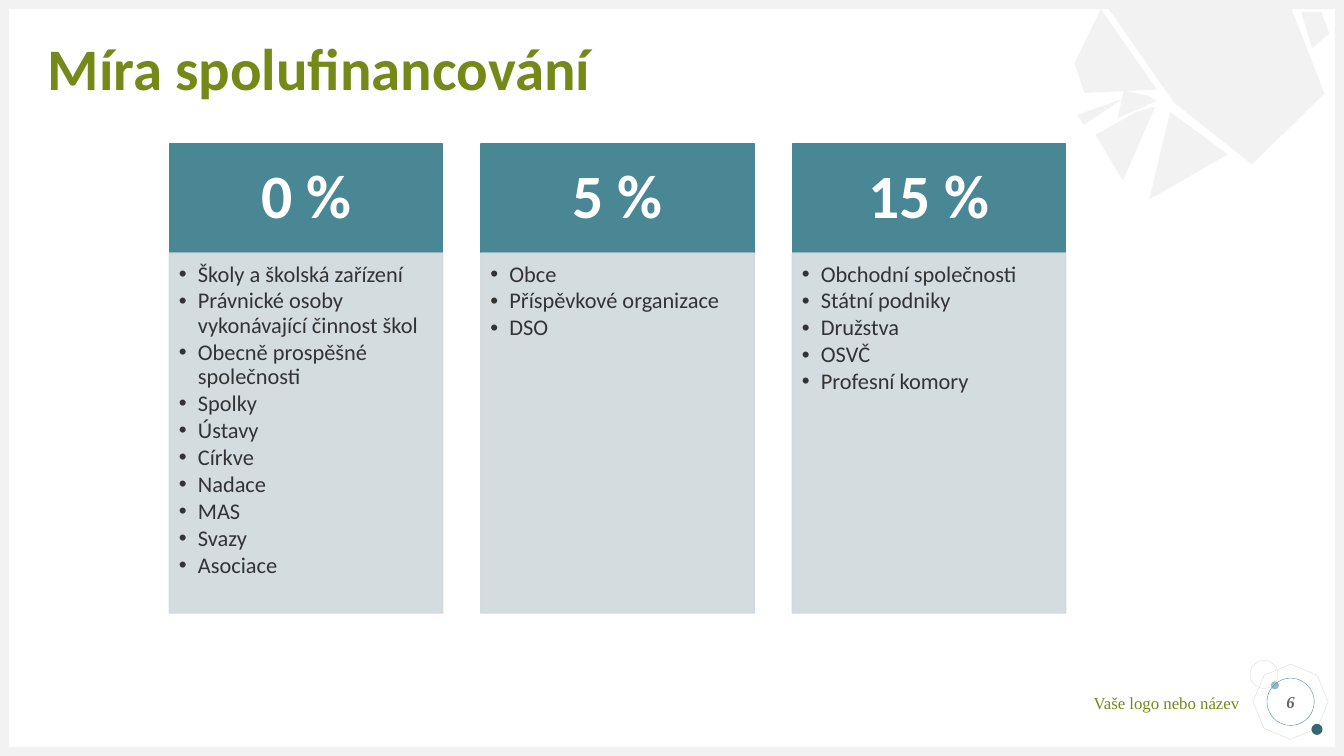
"""Build the slide on co-financing rates with three columns."""
import lxml.etree
import pptx
import pptx.dml.color
import pptx.enum.shapes
import pptx.enum.text
import pptx.oxml.ns
import pptx.util

Cm, Pt = pptx.util.Cm, pptx.util.Pt
qn = pptx.oxml.ns.qn
KIND = pptx.enum.shapes.MSO_SHAPE
ALIGN = pptx.enum.text.PP_ALIGN
ANCHOR = pptx.enum.text.MSO_ANCHOR

WIDE, HIGH, EDGE = 33.87, 19.05, 0.23
GREEN, TEAL, PALE, GREY = "758918", "4A8795", "D0D9DD", "F2F2F2"
TITLE = "Míra spolufinancování"
LOGO = "Vaše logo nebo název"
RATES = {
    "0 %": ["Školy a školská zařízení",
            "Právnické osoby vykonávající činnost škol",
            "Obecně prospěšné společnosti", "Spolky", "Ústavy", "Církve",
            "Nadace", "MAS", "Svazy", "Asociace"],
    "5 %": ["Obce", "Příspěvkové organizace", "DSO"],
    "15 %": ["Obchodní společnosti", "Státní podniky", "Družstva", "OSVČ",
             "Profesní komory"],
}
SHARDS = [
    [(31.55, 4.14), (29.59, 2.59), (27.84, 0.08), (32.51, 0.13), (33.38, 2.36)],
    [(27.74, 0.23), (29.16, 2.26), (27.33, 2.34), (27.08, 1.6)],
    [(27.31, 3.15), (27.15, 2.9), (28.3, 2.49)],
    [(33.07, 1.22), (32.79, 0.3), (33.3, 0.3), (33.5, 0.84)],
    [(30.94, 3.89), (28.96, 5.03), (29.49, 2.82)],
    [(28.3, 4.55), (27.61, 3.4), (28.63, 2.82), (29.11, 2.69)],
    [(28.17, 2.97), (28.32, 2.29), (28.93, 2.41), (29.16, 2.54)],
]
BANDS = [(0, HIGH - EDGE, WIDE, EDGE), (0, 0, WIDE, EDGE),
         (0, 0, EDGE, HIGH), (WIDE - EDGE, 0, EDGE, HIGH)]
RINGS = [
    (KIND.OCTAGON, (31.65, 16.81, 1.75, 1.75), None, "D9D9D9", 22.7),
    (KIND.OVAL, (32.03, 17.17, 0.2, 0.2), "8CBBC6", None, 0),
    (KIND.OVAL, (33.05, 18.24, 0.28, 0.28), "376570", None, 0),
    (KIND.OVAL, (31.5, 16.64, 0.71, 0.71), None, "D9D9D9", 0),
]
LEFT, STEP, WIDTH = 4.27, 7.85, 6.89
HEAD, BODY = (3.63, 2.74), (6.38, 9.07)


def tint(code):
    return pptx.dml.color.RGBColor.from_string(code)


def paint(shape, fill=None, line=None, size=0.25):
    shape.shadow.inherit = False
    if fill:
        shape.fill.solid()
        shape.fill.fore_color.rgb = tint(fill)
    else:
        shape.fill.background()
    if line:
        shape.line.color.rgb = tint(line)
        shape.line.width = Pt(size)
    else:
        shape.line.fill.background()


def draw(slide, kind, box, fill=None, line=None, size=0.25):
    shape = slide.shapes.add_shape(kind, *map(Cm, box))
    paint(shape, fill, line, size)
    return shape


def fade(shape, part):
    for color in shape.element.spPr.iter(qn("a:srgbClr")):
        lxml.etree.SubElement(color, qn("a:alpha")).set("val", str(part * 1000))


def bullet(para):
    props = para._p.get_or_add_pPr()
    props.set("marL", str(Cm(0.48)))
    props.set("indent", str(-Cm(0.48)))
    lxml.etree.SubElement(props, qn("a:buFont")).set("typeface", "Arial")
    lxml.etree.SubElement(props, qn("a:buChar")).set("char", "•")


def write(shape, lines, size, color, name="Calibri", bold=False, slant=False,
          align=ALIGN.LEFT, anchor=ANCHOR.MIDDLE, pad=(0, 0, 0, 0),
          space=1, after=0, dots=False):
    frame = shape.text_frame
    frame.auto_size = pptx.enum.text.MSO_AUTO_SIZE.NONE
    frame.word_wrap = True
    frame.vertical_anchor = anchor
    (frame.margin_left, frame.margin_top,
     frame.margin_right, frame.margin_bottom) = map(Cm, pad)
    frame.text = "\n".join(lines)
    for para in frame.paragraphs:
        para.alignment = align
        para.line_spacing = space
        para.space_after = Pt(after)
        if dots:
            bullet(para)
        font = para.font
        font.name, font.size = name, Pt(size)
        font.bold, font.italic = bold, slant
        font.color.rgb = tint(color)


def trim(slide):
    for kind, box, fill, line, turn in RINGS:
        draw(slide, kind, box, fill, line).rotation = turn
    for box in BANDS:
        draw(slide, KIND.RECTANGLE, box, GREY)
    for shard in SHARDS:
        dots = [(Cm(x), Cm(y)) for x, y in shard]
        form = slide.shapes.build_freeform(*dots[0])
        form.add_line_segments(dots[1:], close=True)
        paint(form.convert_to_shape(), GREY)
    logo = slide.shapes.add_textbox(*map(Cm, (24.26, 17.45, 6.98, 0.51)))
    write(logo, [LOGO], 12, GREEN, "Times New Roman", align=ALIGN.RIGHT,
          anchor=ANCHOR.TOP)
    page = draw(slide, KIND.OVAL, (31.93, 17.09, 1.19, 1.19), line=TEAL)
    write(page, ["6"], 12, "666666", "Times New Roman", True, True, ALIGN.CENTER)


def column(slide, left, rate, items):
    head = draw(slide, KIND.RECTANGLE, (left, HEAD[0], WIDTH, HEAD[1]),
                TEAL, TEAL, 1)
    write(head, [rate], 44, "FFFFFF", bold=True, align=ALIGN.CENTER,
          pad=(0.87, 0.5, 0.87, 0.5), space=0.9)
    body = draw(slide, KIND.RECTANGLE, (left, BODY[0], WIDTH, BODY[1]),
                PALE, PALE, 1)
    fade(body, 90)
    write(body, items, 16, "333333", anchor=ANCHOR.TOP,
          pad=(0.24, 0.24, 0.3, 0.36), space=0.9, after=2, dots=True)


def main():
    deck = pptx.Presentation()
    deck.slide_width, deck.slide_height = Cm(WIDE), Cm(HIGH)
    slide = deck.slides.add_slide(deck.slide_layouts[5])
    trim(slide)
    title = slide.shapes.title
    title.left, title.top, title.width, title.height = map(
        Cm, (1.2, 1.2, 31.5, 1.2))
    write(title, [TITLE], 42, GREEN, bold=True, space=0.9)
    for i, (rate, items) in enumerate(RATES.items()):
        column(slide, LEFT + i * STEP, rate, items)
    deck.save("out.pptx")


if __name__ == "__main__":
    main()
